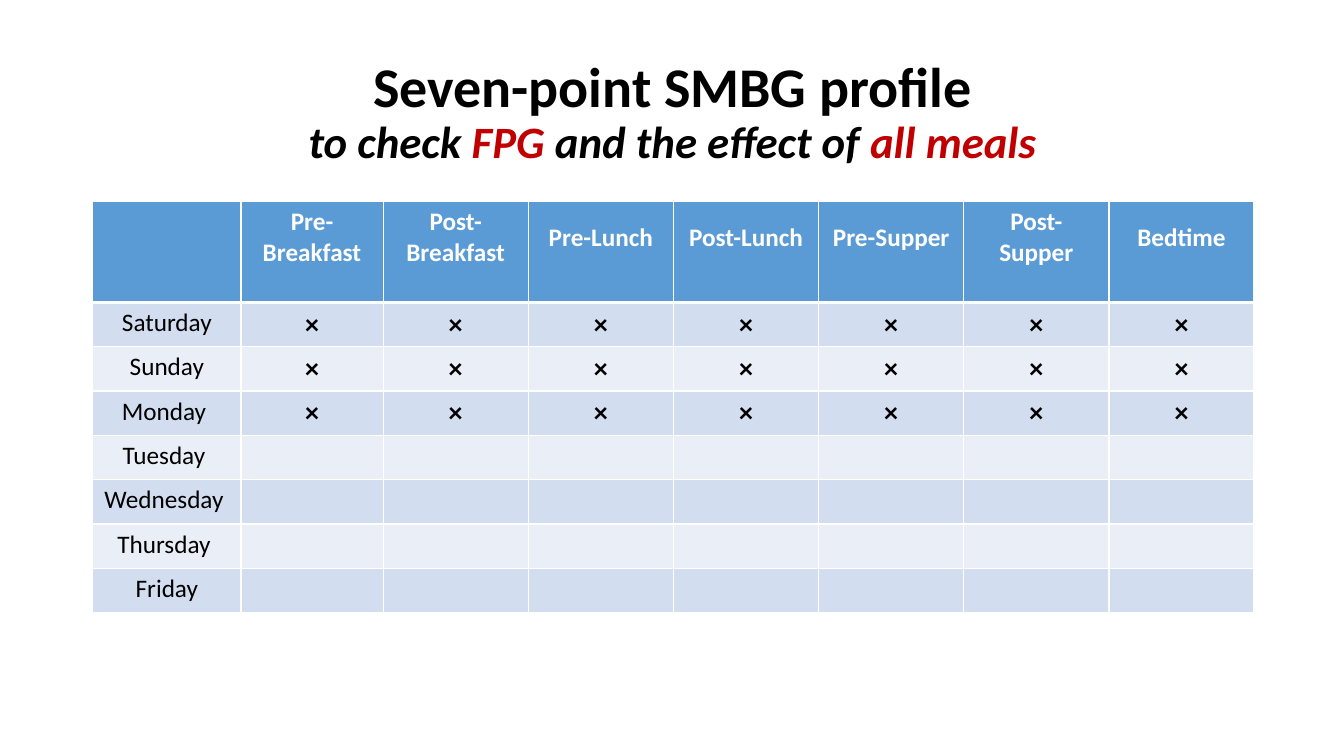
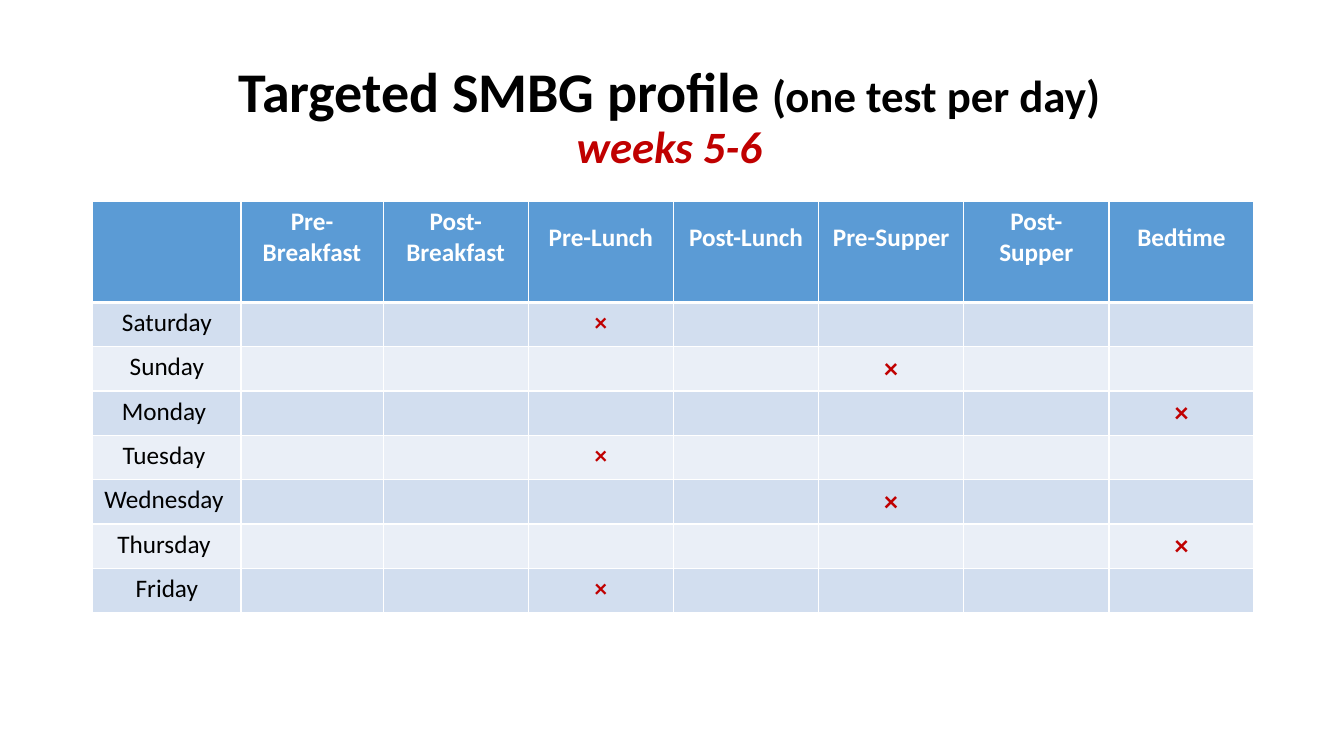
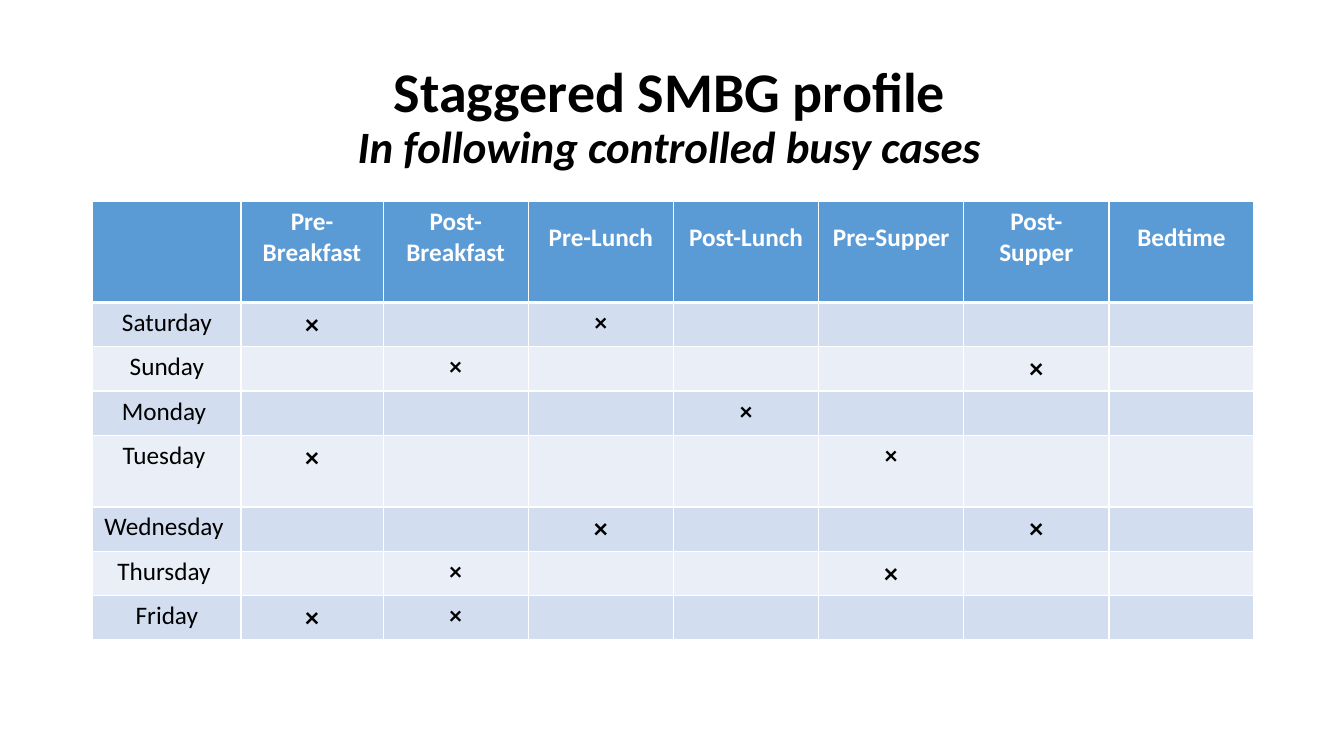
"""Build three slides of weekly glucose self-monitoring (SMBG) profiles."""
from lxml import etree
from pptx import Presentation
from pptx import util as u
from pptx.dml.color import RGBColor
from pptx.enum import text
from pptx.oxml.ns import qn

COLORS = {"black": "000000", "white": "FFFFFF", "red": "C00000",
          "header": "5B9BD5", "odd": "D2DEEF", "even": "EAEFF7"}
FONT = "Calibri"
MEALS = ["", "Pre-Breakfast", "Post-Breakfast", "Pre-Lunch", "Post-Lunch",
         "Pre-Supper", "Post-Supper", "Bedtime"]
DAYS = ["Saturday", "Sunday", "Monday ", "Tuesday ", "Wednesday ", "Thursday ", "Friday"]
COLUMN_WIDTHS = [1.47, 1.41] + [1.44] * 6
HEADER_HEIGHT, DAY_HEIGHT, TALL_DAY_HEIGHT = 1.0, 0.44, 0.71
MARK_SIZES = {"X": 20, "x": 18}
BIG = {"size": 40, "bold": True}
SUB = {"size": 32, "bold": True}
SUB_ITALIC = {**SUB, "italic": True}
SUB_RED = {**SUB_ITALIC, "color": "red"}

PROFILES = [
    {"title_at": (0.92, 0.4),
     "title": [[("Seven-point SMBG profile", BIG)],
               [("to check ", SUB_ITALIC), ("FPG", SUB_RED),
                (" and the effect of ", SUB_ITALIC), ("all meals", SUB_RED)]],
     "marks": ["XXXXXXX"] * 3 + ["......."] * 4,
     "mark_color": "black", "tall_days": []},
    {"title_at": (0.89, 0.45),
     "title": [[("Targeted SMBG profile ", BIG), ("(one test per day)", SUB)],
               [("weeks 5-6", SUB_RED)]],
     "marks": ["..x....", "....X..", "......X", "..x....", "....X..", "......X", "..x...."],
     "mark_color": "red", "tall_days": []},
    {"title_at": (0.89, 0.45),
     "title": [[("Staggered SMBG profile", BIG)],
               [("In following controlled busy cases", SUB_ITALIC)]],
     "marks": ["X.x....", ".x...X.", "...x...", "X...x..", "..X..X.", ".x..X..", "Xx....."],
     "mark_color": "black", "tall_days": ["Tuesday "]},
]


def write(paragraph, words, size=18, color="black", bold=False, italic=False):
    paragraph.alignment = text.PP_ALIGN.CENTER
    run = paragraph.add_run()
    run.text = words
    run.font.name = FONT
    run.font.size = u.Pt(size)
    run.font.bold = bold
    run.font.italic = italic
    run.font.color.rgb = RGBColor.from_string(COLORS[color])


def paint(cell, fill, bottom_width=1):
    cell.fill.solid()
    cell.fill.fore_color.rgb = RGBColor.from_string(COLORS[fill])
    properties = cell._tc.get_or_add_tcPr()
    for position, side in enumerate(["lnL", "lnR", "lnT", "lnB"]):
        width = bottom_width if side == "lnB" else 1
        border = etree.Element(qn(f"a:{side}"), w=str(u.Pt(width)))
        solid = etree.SubElement(border, qn("a:solidFill"))
        etree.SubElement(solid, qn("a:srgbClr"), val=COLORS["white"])
        properties.insert(position, border)


deck = Presentation()
deck.slide_width, deck.slide_height = u.Inches(13.33), u.Inches(7.5)

for profile in PROFILES:
    slide = deck.slides.add_slide(deck.slide_layouts[6])

    left, top = profile["title_at"]
    heading = slide.shapes.add_textbox(
        u.Inches(left), u.Inches(top), u.Inches(11.5), u.Inches(1.45)).text_frame
    heading.word_wrap = True
    heading.vertical_anchor = text.MSO_ANCHOR.MIDDLE
    title = heading.paragraphs[0]
    title.line_spacing = 0.9
    for number, line in enumerate(profile["title"]):
        if number:
            title.add_line_break()
        for words, style in line:
            write(title, words, **style)

    day_heights = [TALL_DAY_HEIGHT if day in profile["tall_days"] else DAY_HEIGHT
                   for day in DAYS]
    row_heights = [HEADER_HEIGHT] + day_heights
    schedule = slide.shapes.add_table(
        len(row_heights), len(MEALS), u.Inches(0.92), u.Inches(2),
        u.Inches(sum(COLUMN_WIDTHS)), u.Inches(sum(row_heights))).table
    for column, width in zip(schedule.columns, COLUMN_WIDTHS):
        column.width = u.Inches(width)
    for row, height in zip(schedule.rows, row_heights):
        row.height = u.Inches(height)

    for column, meal in enumerate(MEALS):
        cell = schedule.cell(0, column)
        paint(cell, "header", bottom_width=3)
        cell.vertical_anchor = text.MSO_ANCHOR.MIDDLE
        cell.margin_bottom = u.Inches(0.34)
        if meal:
            write(cell.text_frame.paragraphs[0], meal, color="white", bold=True)

    for row, (day, marks) in enumerate(zip(DAYS, profile["marks"]), start=1):
        for column in range(len(MEALS)):
            paint(schedule.cell(row, column), "odd" if row % 2 else "even")
        write(schedule.cell(row, 0).text_frame.paragraphs[0], day)
        for column, mark in enumerate(marks, start=1):
            if mark in MARK_SIZES:
                write(schedule.cell(row, column).text_frame.paragraphs[0], "×",
                      size=MARK_SIZES[mark], color=profile["mark_color"], bold=True)

deck.save("out.pptx")
